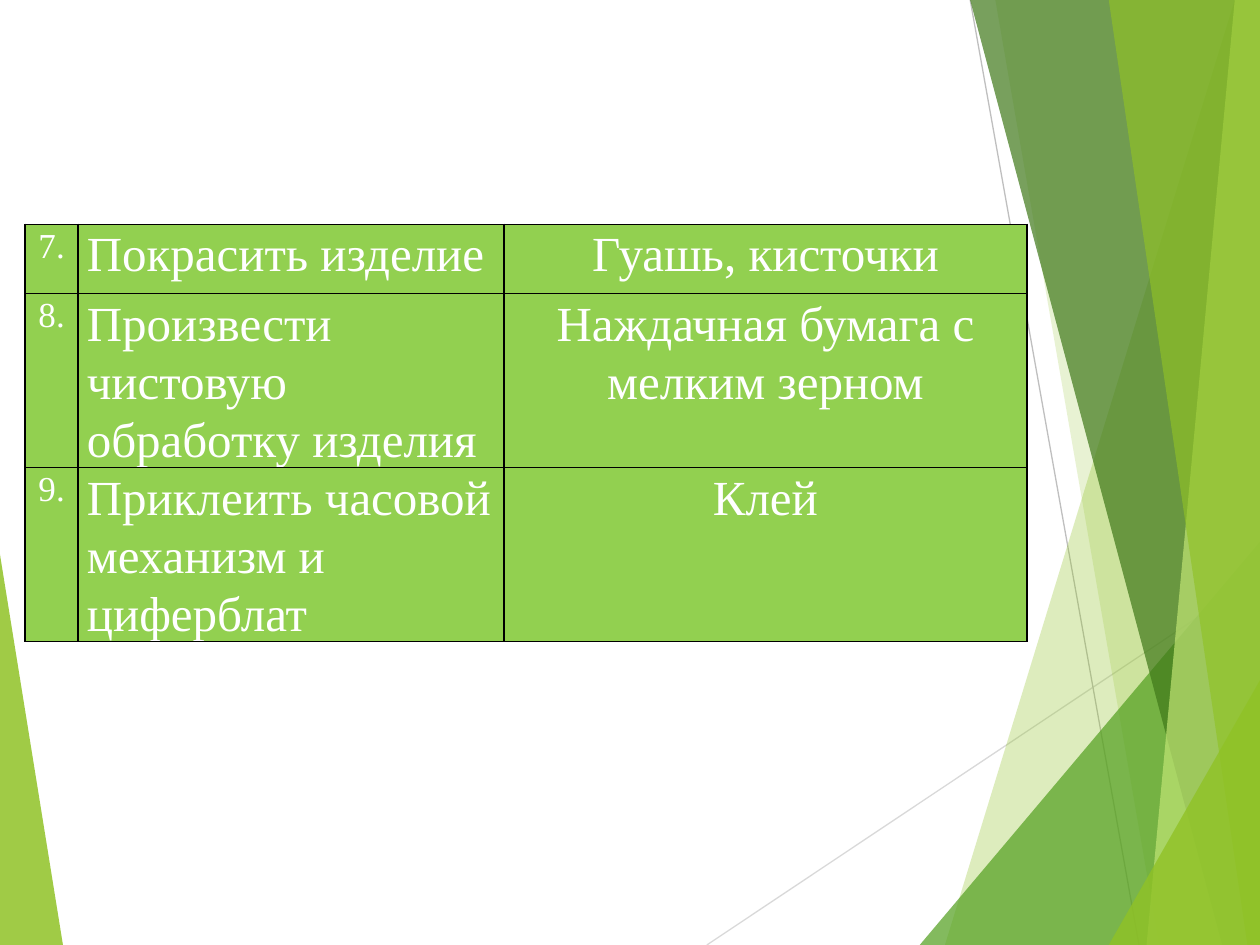
from pptx import Presentation
from pptx.dml.color import RGBColor
from pptx.enum.shapes import MSO_CONNECTOR as CONN
from pptx.enum.text import PP_ALIGN as AL
from pptx.oxml.ns import qn
from pptx.util import Inches, Pt
from lxml.etree import SubElement

COLS, ROWS = 100, 75


def rgb(value):
    return RGBColor.from_string(value)


class Deck:
    font = "Times New Roman"
    cell_fill = "92D050"
    text_color = "FFFFFF"
    border = "000000"
    margins = {"margin_left": Inches(0.07), "margin_right": Inches(0.07),
               "margin_top": 0, "margin_bottom": 0}

    def __init__(self, width, height):
        self.prs = Presentation()
        self.prs.slide_width, self.prs.slide_height = Inches(width), Inches(height)
        self.col = self.prs.slide_width / COLS
        self.row = self.prs.slide_height / ROWS
        self.s = self.prs.slides.add_slide(self.prs.slide_layouts[6])

    def x(self, cols):
        return round(cols * self.col)

    def y(self, rows):
        return round(rows * self.row)

    def facet(self, color, alpha, points):
        fb = self.s.shapes.build_freeform(*points[0], scale=(self.col, self.row))
        fb.add_line_segments(points[1:], close=True)
        sp = fb.convert_to_shape()
        sp.shadow.inherit = False
        sp.fill.solid()
        sp.fill.fore_color.rgb = rgb(color)
        clr = sp._element.spPr.find(".//" + qn("a:srgbClr"))
        SubElement(clr, qn("a:alpha"), val=str(alpha * 1000))
        sp.line.fill.background()

    def line(self, color, start, end):
        c = self.s.shapes.add_connector(CONN.STRAIGHT, self.x(start[0]), self.y(start[1]),
                                        self.x(end[0]), self.y(end[1]))
        c.line.color.rgb = rgb(color)
        c.line.width = Pt(0.75)
        SubElement(c._element.spPr, qn("a:effectLst"))

    def borders(self, cell):
        tc_pr = cell._tc.get_or_add_tcPr()
        for side in ("lnL", "lnR", "lnT", "lnB"):
            ln = SubElement(tc_pr, qn("a:" + side), w=str(Pt(1)))
            fill = SubElement(ln, qn("a:solidFill"))
            SubElement(fill, qn("a:srgbClr"), val=self.border)

    def cell(self, cell, text, size, align):
        for name, value in self.margins.items():
            setattr(cell, name, value)
        self.borders(cell)
        cell.fill.solid()
        cell.fill.fore_color.rgb = rgb(self.cell_fill)
        p = cell.text_frame.paragraphs[0]
        p.alignment, p.line_spacing = align, 1.07
        r = p.add_run()
        r.text = text
        for name, value in {"name": self.font, "size": Pt(size), "bold": False}.items():
            setattr(r.font, name, value)
        r.font.color.rgb = rgb(self.text_color)

    def table(self, left, top, widths, heights, formats, rows):
        tbl = self.s.shapes.add_table(len(heights), len(widths), self.x(left), self.y(top),
                                      self.x(sum(widths)), self.y(sum(heights))).table
        tbl.first_row = tbl.horz_banding = False
        for column, width in zip(tbl.columns, widths):
            column.width = self.x(width)
        for row, height, texts in zip(tbl.rows, heights, rows):
            row.height = self.y(height)
            for cell, text, fmt in zip(row.cells, texts, formats):
                self.cell(cell, text, *fmt)


FACETS = [
    ("90C226", 30, [(97.5, 0), (75.4, ROWS), (COLS, ROWS), (COLS, 0)]),
    ("90C226", 20, [(78.8, 0), (91.9, ROWS), (COLS, ROWS), (COLS, 0)]),
    ("54A021", 72, [(72.6, ROWS), (COLS, 42.9), (COLS, ROWS)]),
    ("3F7819", 70, [(76.7, 0), (97, ROWS), (COLS, ROWS), (COLS, 0)]),
    ("C0E474", 70, [(98.1, 0), (90.7, ROWS), (COLS, ROWS), (COLS, 0)]),
    ("90C226", 65, [(88.3, 0), (98.6, ROWS), (COLS, ROWS), (99.8, 0)]),
    ("90C226", 80, [(88.1, ROWS), (COLS, 53.5), (COLS, ROWS)]),
]
STEPS = [
    ("7.", "Покрасить изделие", "Гуашь, кисточки"),
    ("8.", "Произвести чистовую обработку изделия", "Наждачная бумага с мелким зерном"),
    ("9.", "Приклеить часовой механизм и циферблат", "Клей"),
]


def main():
    deck = Deck(10, 7.5)
    deck.facet("90C226", 85, [(0, 44.4), (4.9, ROWS), (0, ROWS)])
    deck.line("D9D9D9", (56.1, ROWS), (COLS, 45.7))
    deck.line("BFBFBF", (77, 0), (90.4, ROWS))
    for facet in FACETS:
        deck.facet(*facet)
    deck.table(2, 17.8, [4.2, 33.8, 41.5], [5.5, 13.8, 13.8],
               [(20, AL.CENTER), (28, AL.LEFT), (28, AL.CENTER)], STEPS)
    deck.prs.save("out.pptx")


if __name__ == "__main__":
    main()
